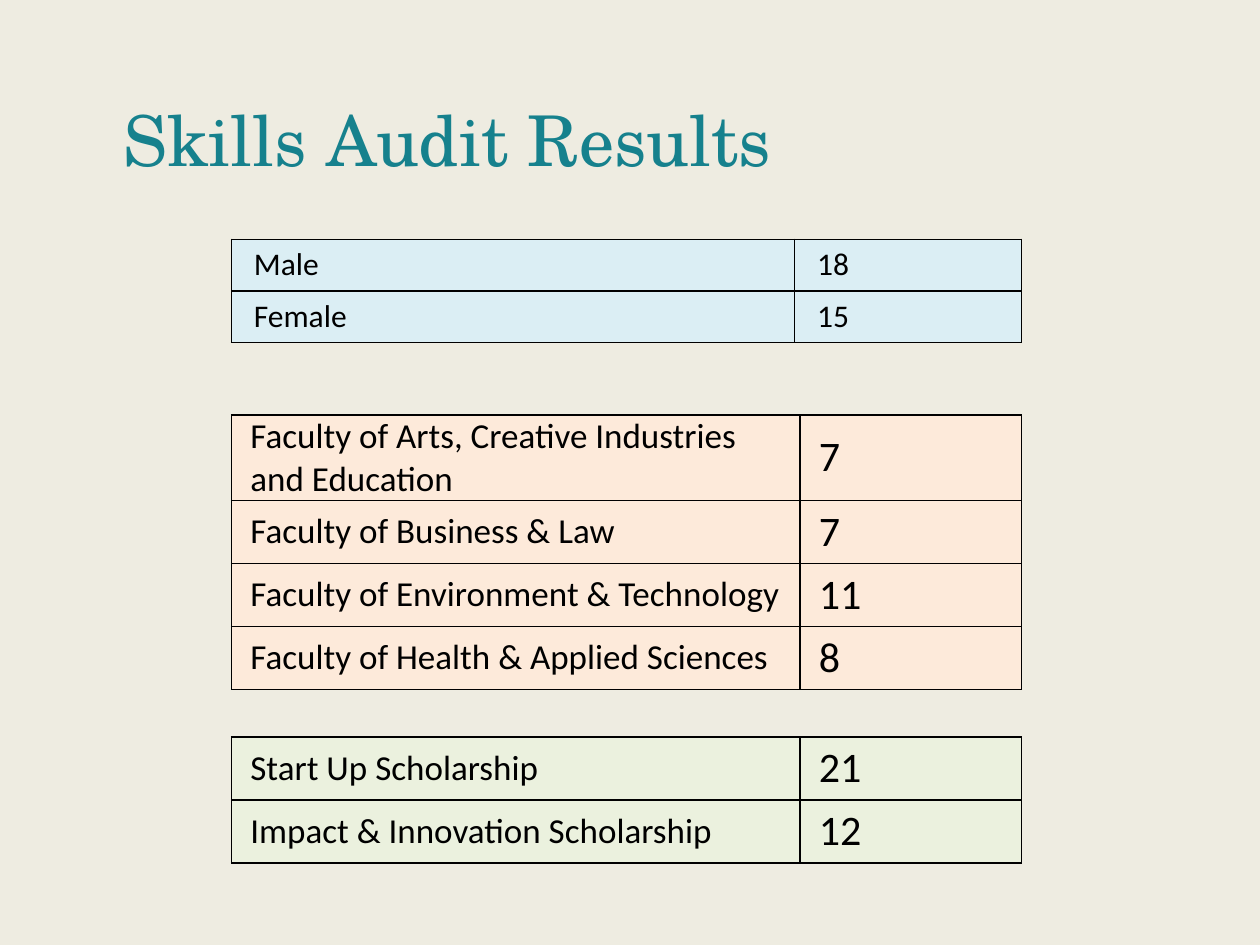
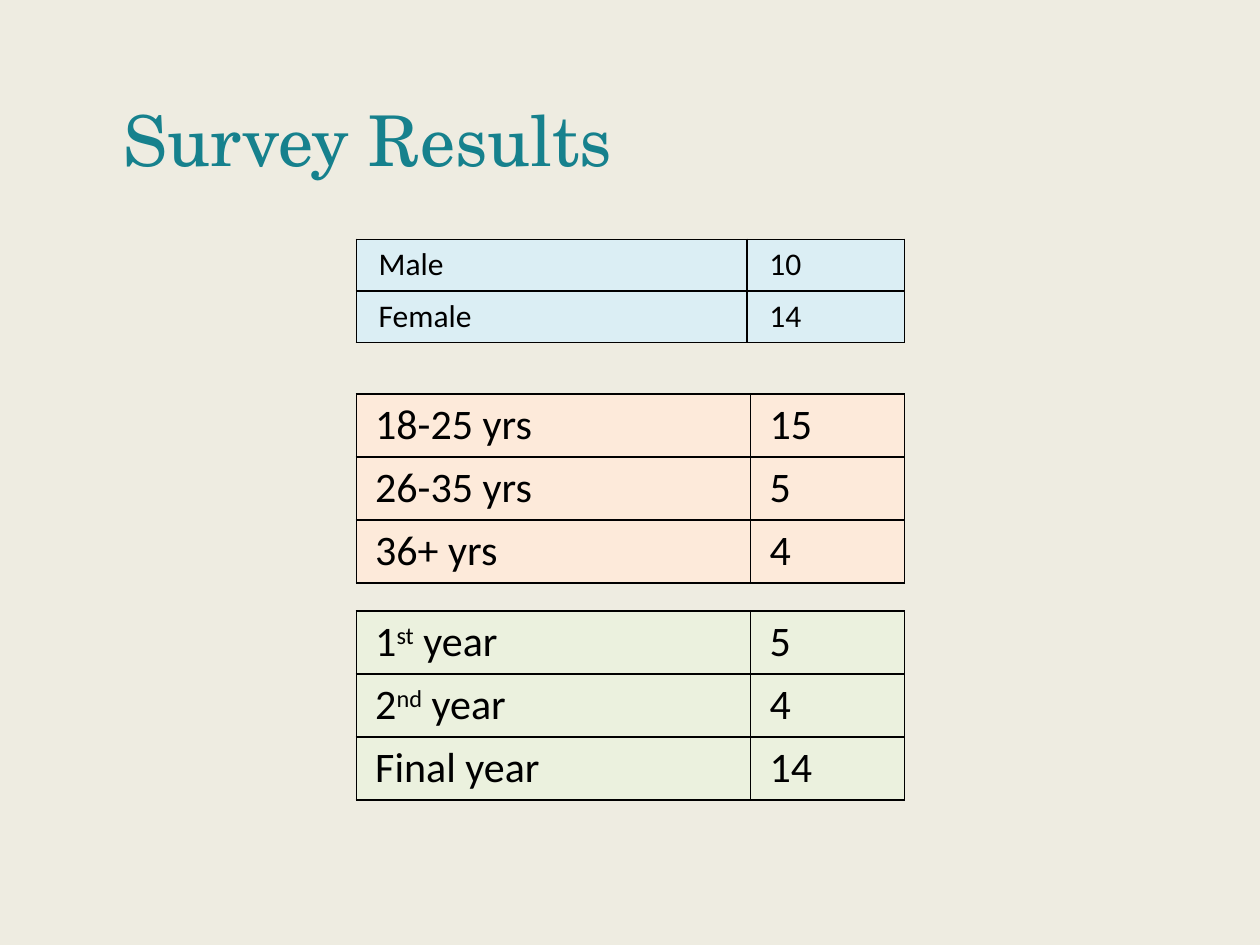
from lxml.etree import SubElement
from pptx import Presentation
from pptx.dml.color import RGBColor
from pptx.enum.text import MSO_ANCHOR, PP_ALIGN
from pptx.oxml.ns import qn
from pptx.util import Pt

PAPER, TEAL, INK = "EEECE1", "16818D", "000000"
BLUE, PEACH, GREEN = "DBEEF4", "FDEADA", "EBF1DE"
SERIF, SANS = "TeX Gyre Schola", "Calibri"


def tint(code):
    return RGBColor.from_string(code)


class Deck:
    """Holds the shared style and the current slide."""

    def __init__(self):
        self.prs = Presentation()
        self.prs.slide_width, self.prs.slide_height = Pt(720), Pt(540)
        fill = self.prs.slide_master.background.fill
        fill.solid()
        fill.fore_color.rgb = tint(PAPER)

    def start(self, title):
        self.slide = self.prs.slides.add_slide(self.prs.slide_layouts[5])
        head = self.slide.shapes.title
        head.left, head.top, head.width, head.height = Pt(70.5), Pt(54), Pt(513.5), Pt(51)
        frame = head.text_frame
        frame.word_wrap = True
        frame.vertical_anchor = MSO_ANCHOR.TOP
        frame.margin_left = frame.margin_right = frame.margin_bottom = 0
        frame.margin_top = Pt(7)
        para = frame.paragraphs[0]
        para.alignment = PP_ALIGN.LEFT
        para.line_spacing = Pt(42)
        self.run(para, title, 40, SERIF, TEAL)

    def run(self, para, text, size, face=SANS, color=INK, raised=False):
        run = para.add_run()
        run.text = text
        font = run.font
        font.size, font.name = Pt(size), face
        font.color.rgb = tint(color)
        if raised:
            font._element.set("baseline", "30000")

    def border(self, cell):
        props = cell._tc.get_or_add_tcPr()
        for side in ("lnL", "lnR", "lnT", "lnB"):
            line = SubElement(props, qn(f"a:{side}"), w=str(Pt(1)))
            fill = SubElement(line, qn("a:solidFill"))
            SubElement(fill, qn("a:srgbClr"), val=INK)

    def cell(self, cell, parts, size, color, tight):
        self.border(cell)
        cell.fill.solid()
        cell.fill.fore_color.rgb = tint(color)
        if tight:
            cell.vertical_anchor = MSO_ANCHOR.MIDDLE
            cell.margin_left = cell.margin_right = Pt(5.2)
            cell.margin_top = cell.margin_bottom = 0
        para = cell.text_frame.paragraphs[0]
        props = para._p.get_or_add_pPr()
        props.set("marL", str(Pt(5.6)))
        props.set("indent", "0")
        for i, part in enumerate(parts):
            self.run(para, part, size, raised=i % 2 == 1)

    def table(self, left, top, widths, high, color, sizes, rows, tight=True):
        frame = self.slide.shapes.add_table(
            len(rows), len(widths), Pt(left), Pt(top), Pt(sum(widths)), Pt(high * len(rows)))
        grid = frame.table
        grid.first_row = grid.horz_banding = False
        for col, width in zip(grid.columns, widths):
            col.width = Pt(width)
        for r, row in enumerate(rows):
            grid.rows[r].height = Pt(high)
            for c, text in enumerate(row):
                parts = text if isinstance(text, tuple) else (text,)
                self.cell(grid.cell(r, c), parts, sizes[c], color, tight)

    def gender(self, left, widths, men, women):
        self.table(left, 136.8, widths, 29.4, BLUE, (18, 18),
                   [("Male", men), ("Female", women)], tight=False)


def audit(deck):
    deck.start("Skills Audit Results")
    left, widths, sizes = 132.3, (324.9, 126.6), (20, 24)
    deck.gender(left, (321.8, 129.7), "18", "15")
    deck.table(left, 237, widths, 36, PEACH, sizes, [
        ("Faculty of Arts, Creative Industries and Education", "7"),
        ("Faculty of Business & Law", "7"),
        ("Faculty of Environment & Technology", "11"),
        ("Faculty of Health & Applied Sciences", "8")])
    deck.table(left, 421.2, widths, 36, GREEN, sizes, [
        ("Start Up Scholarship", "21"),
        ("Impact & Innovation Scholarship", "12")])


def survey(deck):
    deck.start("Survey Results")
    left, widths, sizes = 203.6, (225.4, 87.8), (24, 24)
    deck.table(left, 225.2, widths, 36, PEACH, sizes, [
        ("18-25 yrs", "15"), ("26-35 yrs", "5"), ("36+ yrs", "4")])
    deck.gender(left, (223.2, 90), "10", "14")
    deck.table(left, 349.2, widths, 36, GREEN, sizes, [
        (("1", "st", " year"), "5"), (("2", "nd", " year"), "4"), ("Final year", "14")])


def main():
    deck = Deck()
    audit(deck)
    survey(deck)
    deck.prs.save("out.pptx")


if __name__ == "__main__":
    main()
